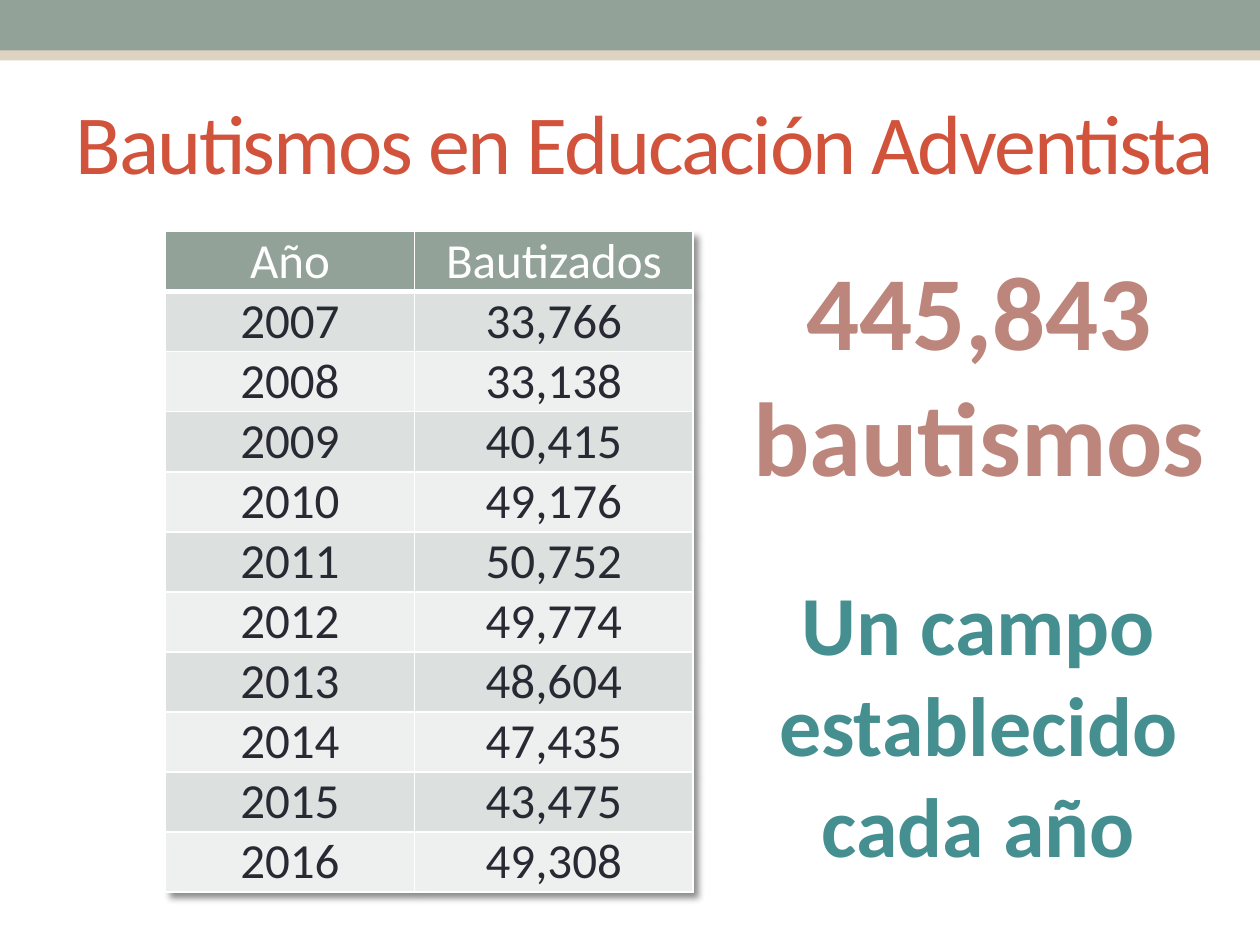
from dataclasses import dataclass

from lxml import etree
from pptx import Presentation
from pptx.dml.color import RGBColor
from pptx.enum.shapes import MSO_SHAPE
from pptx.enum.text import MSO_ANCHOR, MSO_AUTO_SIZE, PP_ALIGN
from pptx.oxml.ns import qn
from pptx.util import Cm, Pt

RECTANGLE = MSO_SHAPE.RECTANGLE
MIDDLE = MSO_ANCHOR.MIDDLE
NO_FIT, GROW = MSO_AUTO_SIZE.NONE, MSO_AUTO_SIZE.SHAPE_TO_FIT_TEXT
LEFT, CENTER = PP_ALIGN.LEFT, PP_ALIGN.CENTER
TITLE_ONLY = 5

BAPTISMS = [
    ("Año", "Bautizados"),
    ("2007", "33,766"),
    ("2008", "33,138"),
    ("2009", "40,415"),
    ("2010", "49,176"),
    ("2011", "50,752"),
    ("2012", "49,774"),
    ("2013", "48,604"),
    ("2014", "47,435"),
    ("2015", "43,475"),
    ("2016", "49,308"),
]


@dataclass(frozen=True)
class Theme:
    font: str = "Calibri"
    sage: str = "93A299"
    sand: str = "DED2C2"
    title: str = "D2533C"
    total: str = "BD867C"
    message: str = "458F91"
    ink: str = "292934"
    white: str = "FFFFFF"
    bands: tuple = ("EEF0EF", "DCE0DE")
    title_size: int = 48
    total_size: int = 60
    message_size: int = 48
    table_size: int = 28


class SlideBuilder:
    def __init__(self, slide, theme):
        self.slide = slide
        self.theme = theme

    def format_text(self, frame, size, color, align=CENTER, bold=False):
        for para in frame.paragraphs:
            para.alignment = align
            for span in para.runs:
                span.font.name = self.theme.font
                span.font.size = Pt(size)
                span.font.bold = bold
                span.font.color.rgb = RGBColor.from_string(color)

    def band(self, top, height, color):
        bar = self.slide.shapes.add_shape(RECTANGLE, 0, Cm(top), Cm(25.4), Cm(height))
        bar.shadow.inherit = False
        bar.fill.solid()
        bar.fill.fore_color.rgb = RGBColor.from_string(color)
        bar.line.fill.background()

    def title(self, text, left, top, width, height):
        box = self.slide.shapes.title
        box.left, box.top, box.width, box.height = map(Cm, (left, top, width, height))
        frame = box.text_frame
        frame.text = text
        frame.auto_size = NO_FIT
        frame.vertical_anchor = MIDDLE
        self.format_text(frame, self.theme.title_size, self.theme.title, LEFT)
        for span in frame.paragraphs[0].runs:
            span.font._element.set("spc", "-120")

    def callout(self, text, left, top, width, height, size, color):
        box = self.slide.shapes.add_textbox(Cm(left), Cm(top), Cm(width), Cm(height))
        frame = box.text_frame
        frame.word_wrap = False
        frame.auto_size = GROW
        frame.text = text
        self.format_text(frame, size, color, bold=True)

    def table(self, rows, left, top, column_widths, row_height):
        frame = self.slide.shapes.add_table(
            len(rows), len(column_widths), Cm(left), Cm(top),
            Cm(sum(column_widths)), Cm(row_height * len(rows)))
        grid = frame.table
        self.table_shadow(grid)
        for column, width in zip(grid.columns, column_widths):
            column.width = Cm(width)
        for index, values in enumerate(rows):
            grid.rows[index].height = Cm(row_height)
            for column, value in enumerate(values):
                self.cell(grid.cell(index, column), value, index)

    def cell(self, cell, value, row):
        header = row == 0
        fill = self.theme.sage if header else self.theme.bands[row % 2]
        ink = self.theme.white if header else self.theme.ink
        cell.margin_top = cell.margin_bottom = 0
        cell.text_frame.text = value
        self.format_text(cell.text_frame, self.theme.table_size, ink)
        properties = cell._tc.get_or_add_tcPr()
        for side in ("lnL", "lnR", "lnT", "lnB"):
            width = 3 if header and side == "lnB" else 1
            line = etree.SubElement(properties, qn(f"a:{side}"), w=str(Pt(width)))
            solid = etree.SubElement(line, qn("a:solidFill"))
            etree.SubElement(solid, qn("a:srgbClr"), val=self.theme.white)
        cell.fill.solid()
        cell.fill.fore_color.rgb = RGBColor.from_string(fill)

    def table_shadow(self, grid):
        effects = etree.Element(qn("a:effectLst"))
        shadow = etree.SubElement(
            effects, qn("a:outerShdw"), blurRad=str(Pt(4)), dist=str(Pt(4)),
            dir="2700000", algn="tl", rotWithShape="0")
        color = etree.SubElement(shadow, qn("a:srgbClr"), val="000000")
        etree.SubElement(color, qn("a:alpha"), val="45000")
        grid._tbl.tblPr.insert(0, effects)


def main():
    theme = Theme()
    deck = Presentation()
    deck.slide_width, deck.slide_height = Cm(25.4), Cm(19.05)
    page = SlideBuilder(deck.slides.add_slide(deck.slide_layouts[TITLE_ONLY]), theme)
    page.band(0.2, 1.02, theme.sand)
    page.band(0, 1.02, theme.sage)
    page.title("Bautismos en Educación Adventista", 1.27, 1.47, 23.67, 2.74)
    page.table(BAPTISMS, 3.33, 4.67, (5.03, 5.61), 1.21)
    page.callout("445,843\nbautismos", 14.88, 4.83, 9.73, 5.38,
                 theme.total_size, theme.total)
    page.callout("Un campo\vestablecido\vcada año", 15.42, 11.4, 8.61, 6.4,
                 theme.message_size, theme.message)
    deck.save("out.pptx")


if __name__ == "__main__":
    main()
